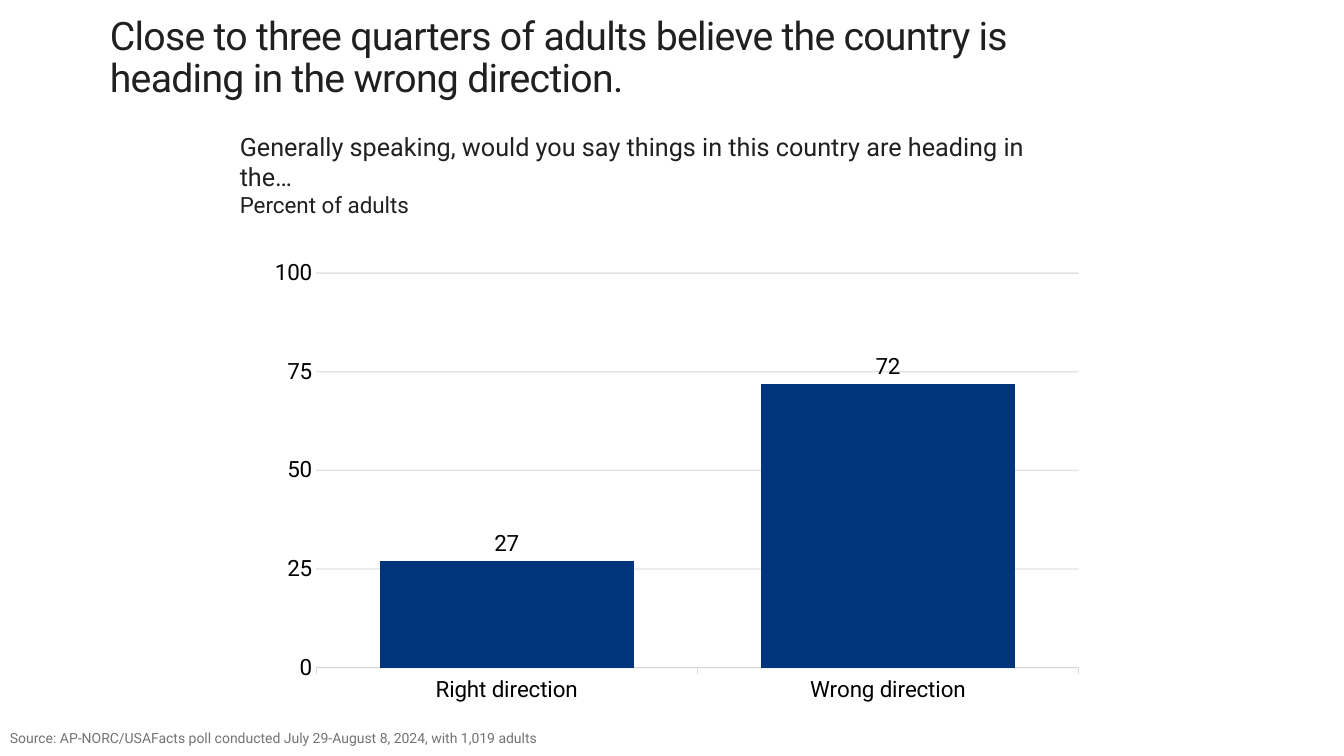
from dataclasses import dataclass

from lxml import etree
from pptx import Presentation
from pptx.chart.data import CategoryChartData
from pptx.dml.color import RGBColor
from pptx.enum.chart import XL_CHART_TYPE, XL_LABEL_POSITION, XL_TICK_MARK
from pptx.enum.text import MSO_ANCHOR, MSO_AUTO_SIZE, PP_ALIGN
from pptx.oxml import parse_xml
from pptx.oxml.ns import nsdecls, qn
from pptx.util import Inches, Pt


@dataclass(frozen=True)
class Theme:
    """Colours, font and type sizes of the slide."""
    face: str = "Roboto"
    ink: str = "202020"
    black: str = "000000"
    grey: str = "727373"
    bar: str = "00347B"
    axis: str = "D9D9D9"
    grid: str = "C7C7C7"
    title: int = 28
    lead: int = 18
    body: int = 16
    note: int = 10


class Deck:
    """Holds the theme and the current slide."""

    def __init__(self, theme):
        """Open a wide deck with one titled slide."""
        self.theme = theme
        self.prs = Presentation()
        self.prs.slide_width = Inches(13.33)
        self.prs.slide_height = Inches(7.5)
        self.slide = self.prs.slides.add_slide(self.prs.slide_layouts[5])

    def style(self, font, size, color):
        """Set face, size and colour of a font."""
        font.name = self.theme.face
        font.size = Pt(size)
        font.color.rgb = RGBColor.from_string(color)

    def fill(self, shape, box, lines, color, inset=0.1, anchor=MSO_ANCHOR.TOP, lead=None):
        """Place a shape and write its lines of text."""
        shape.left, shape.top, shape.width, shape.height = map(Inches, box)
        frame = shape.text_frame
        frame.word_wrap = True
        frame.auto_size = MSO_AUTO_SIZE.NONE
        frame.vertical_anchor = anchor
        frame.margin_left = Inches(inset)
        frame.margin_top = frame.margin_right = frame.margin_bottom = 0
        frame.text = "\n".join(text for text, size in lines)
        for para, (text, size) in zip(frame.paragraphs, lines):
            para.alignment = PP_ALIGN.LEFT
            para.line_spacing = lead
            self.style(para.font, size, color)

    def title(self, text, box):
        """Write the slide title."""
        shape = self.slide.shapes.title
        self.fill(shape, box, [(text, self.theme.title)], self.theme.ink, inset=0, lead=0.9)
        run = shape.text_frame.paragraphs[0].runs[0]
        run.font.name = self.theme.face
        run.font._element.set("spc", "-50")

    def text(self, box, lines, color, **opts):
        """Add a text box."""
        shape = self.slide.shapes.add_textbox(*map(Inches, box))
        self.fill(shape, box, lines, color, **opts)

    def chart(self, box, cats, vals, plot):
        """Add a column chart with value labels."""
        theme = self.theme
        data = CategoryChartData()
        data.categories = cats
        data.add_series("Series 1", vals)
        chart = self.slide.shapes.add_chart(
            XL_CHART_TYPE.COLUMN_CLUSTERED, *map(Inches, box), data).chart
        chart.has_legend = chart.has_title = False
        self.style(chart.font, theme.body, theme.black)

        cat = chart.category_axis
        cat.major_tick_mark = XL_TICK_MARK.OUTSIDE
        cat.format.line.color.rgb = RGBColor.from_string(theme.axis)
        cat.format.line.width = Pt(0.75)

        val = chart.value_axis
        val.minimum_scale, val.maximum_scale, val.major_unit = 0, 100, 25
        val.major_tick_mark = XL_TICK_MARK.NONE
        val.format.line.fill.background()
        line = val.major_gridlines.format.line
        line.color.rgb = RGBColor.from_string(theme.grid)
        line.width = Pt(1)
        tint = val.major_gridlines._xAx.find(".//" + qn("c:majorGridlines")).find(
            ".//" + qn("a:srgbClr"))
        etree.SubElement(tint, qn("a:alpha")).set("val", "50000")

        bars = chart.plots[0]
        bars.gap_width = 50
        bars.vary_by_categories = False
        fill = bars.series[0].format.fill
        fill.solid()
        fill.fore_color.rgb = RGBColor.from_string(theme.bar)
        labels = bars.series[0].data_labels
        labels.show_value = True
        labels.position = XL_LABEL_POSITION.OUTSIDE_END
        self.style(labels.font, theme.body, theme.black)
        self.inner(chart, plot)

    def inner(self, chart, plot):
        """Fix the inner plot area as fractions of the chart."""
        modes = "".join(f'<c:{key}Mode val="edge"/>' for key in "xy")
        sizes = "".join(f'<c:{key} val="{num}"/>' for key, num in zip("xywh", plot))
        area = chart._chartSpace.find(".//" + qn("c:plotArea"))
        for old in area.findall(qn("c:layout")):
            area.remove(old)
        area.insert(0, parse_xml(
            f'<c:layout {nsdecls("c")}><c:manualLayout><c:layoutTarget val="inner"/>'
            f'{modes}{sizes}</c:manualLayout></c:layout>'))


def main():
    """Build and save the slide."""
    theme = Theme()
    deck = Deck(theme)
    deck.title("Close to three quarters of adults believe the country is "
               "heading in the wrong direction.", (1.09, 0.16, 10.28, 1.09))
    deck.chart((2.56, 2.53, 8.22, 4.5), ["Right direction", "Wrong direction"],
               [27, 72], (0.07, 0.04, 0.92, 0.87))
    deck.text((0, 7.23, 7.5, 0.2),
              [("Source: AP-NORC/USAFacts poll conducted July 29-August 8, 2024, "
                "with 1,019 adults", theme.note)],
              theme.grey, anchor=MSO_ANCHOR.MIDDLE, lead=0.95)
    deck.text((2.28, 1.3, 8.36, 1.09),
              [("Generally speaking, would you say things in this country "
                "are heading in the…", theme.lead),
               ("Percent of adults", theme.body)], theme.ink)
    deck.prs.save("out.pptx")


if __name__ == "__main__":
    main()
